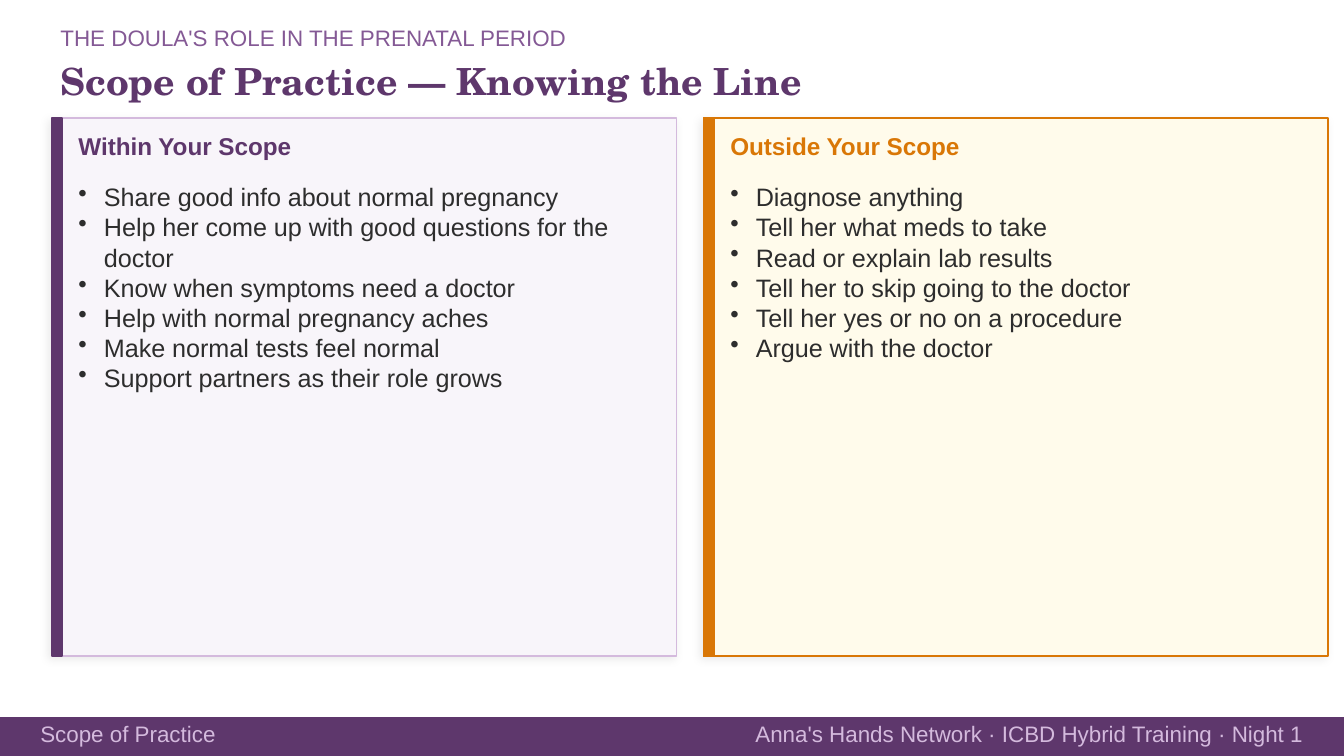
from lxml.etree import SubElement
from pptx import Presentation
from pptx.dml.color import RGBColor
from pptx.enum.shapes import MSO_SHAPE as Preset
from pptx.enum.text import PP_ALIGN as Align
from pptx.oxml.ns import qn
from pptx.util import Inches, Pt

PLUM = RGBColor(0x5E, 0x37, 0x6C)
MAUVE = RGBColor(0x84, 0x59, 0x95)
LILAC = RGBColor(0xD4, 0xBA, 0xDD)
MIST = RGBColor(0xF8, 0xF5, 0xFA)
AMBER = RGBColor(0xD9, 0x77, 0x06)
CREAM = RGBColor(0xFF, 0xFB, 0xEB)
INK = RGBColor(0x2D, 0x2D, 0x2D)

deck = Presentation()
deck.slide_width = Inches(10)
deck.slide_height = deck.slide_width * 9 // 16
slide = deck.slides.add_slide(deck.slide_layouts[6])
CELL = deck.slide_width / 100


def write_text(lines, area, size, color, font="Arial", bold=False,
               align=Align.LEFT, spacing=None, bulleted=False):
    box = slide.shapes.add_textbox(*[round(n * CELL) for n in area])
    frame = box.text_frame
    frame.word_wrap = True
    frame.margin_left = frame.margin_right = 0
    frame.margin_top = frame.margin_bottom = 0
    frame.text = lines
    for paragraph in frame.paragraphs:
        paragraph.alignment = align
        if spacing:
            paragraph.line_spacing = spacing
        if bulleted:
            props = paragraph._p.get_or_add_pPr()
            props.set("marL", str(Inches(0.19)))
            props.set("indent", str(-Inches(0.19)))
            tint = SubElement(props, qn("a:buClr"))
            SubElement(tint, qn("a:srgbClr"), val=str(color))
            SubElement(props, qn("a:buSzPct"), val="100000")
            SubElement(props, qn("a:buChar"), char="•")
        for run in paragraph.runs:
            run.font.name = font
            run.font.size = Pt(size)
            run.font.bold = bold
            run.font.color.rgb = color


def draw_box(area, fill, line, shadowed=False):
    box = slide.shapes.add_shape(Preset.RECTANGLE, *[round(n * CELL) for n in area])
    box.fill.solid()
    box.fill.fore_color.rgb = fill
    box.line.color.rgb = line
    box.line.width = Pt(1)
    box.shadow.inherit = False
    if shadowed:
        effects = box._element.spPr.find(qn("a:effectLst"))
        shadow = SubElement(effects, qn("a:outerShdw"), blurRad=str(Pt(5)),
                            dist=str(Pt(2)), dir="8100000", algn="bl", rotWithShape="0")
        shade = SubElement(shadow, qn("a:srgbClr"), val="000000")
        SubElement(shade, qn("a:alpha"), val="8000")


write_text("THE DOULA'S ROLE IN THE PRENATAL PERIOD", (4.5, 1.8, 91, 2.2), 12, MAUVE)
write_text("Scope of Practice — Knowing the Line", (4.5, 4, 91, 7.2), 20, PLUM,
           font="TeX Gyre Schola", bold=True, spacing=1.1)

cards = [
    ("Within Your Scope", PLUM, MIST, LILAC, [
        "Share good info about normal pregnancy",
        "Help her come up with good questions for the doctor",
        "Know when symptoms need a doctor",
        "Help with normal pregnancy aches",
        "Make normal tests feel normal",
        "Support partners as their role grows",
    ]),
    ("Outside Your Scope", AMBER, CREAM, AMBER, [
        "Diagnose anything",
        "Tell her what meds to take",
        "Read or explain lab results",
        "Tell her to skip going to the doctor",
        "Tell her yes or no on a procedure",
        "Argue with the doctor",
    ]),
]
card_width, gutter, card_top, card_height = 46.5, 2, 8.8, 40
for index, (heading, accent, fill, border, duties) in enumerate(cards):
    left = 3.84 + index * (card_width + gutter)
    draw_box((left, card_top, card_width, card_height), fill, border, shadowed=True)
    draw_box((left, card_top, 0.8, card_height), accent, accent)
    write_text(heading, (left + 2, card_top + 1, 42.4, 3.2), 13, accent, bold=True)
    write_text("\n".join(duties), (left + 2, card_top + 4.7, 42.4, 34.2), 13.5, INK,
               bulleted=True)

footer_height = 2.8
footer_top = 56.25 - footer_height
draw_box((0, footer_top, 100, footer_height), PLUM, PLUM)
write_text("Scope of Practice", (3, footer_top + 0.15, 55, 2.5), 12, LILAC)
write_text("Anna's Hands Network · ICBD Hybrid Training · Night 1",
           (0, footer_top + 0.15, 97, 2.5), 12, LILAC, align=Align.RIGHT)

deck.save("out.pptx")
